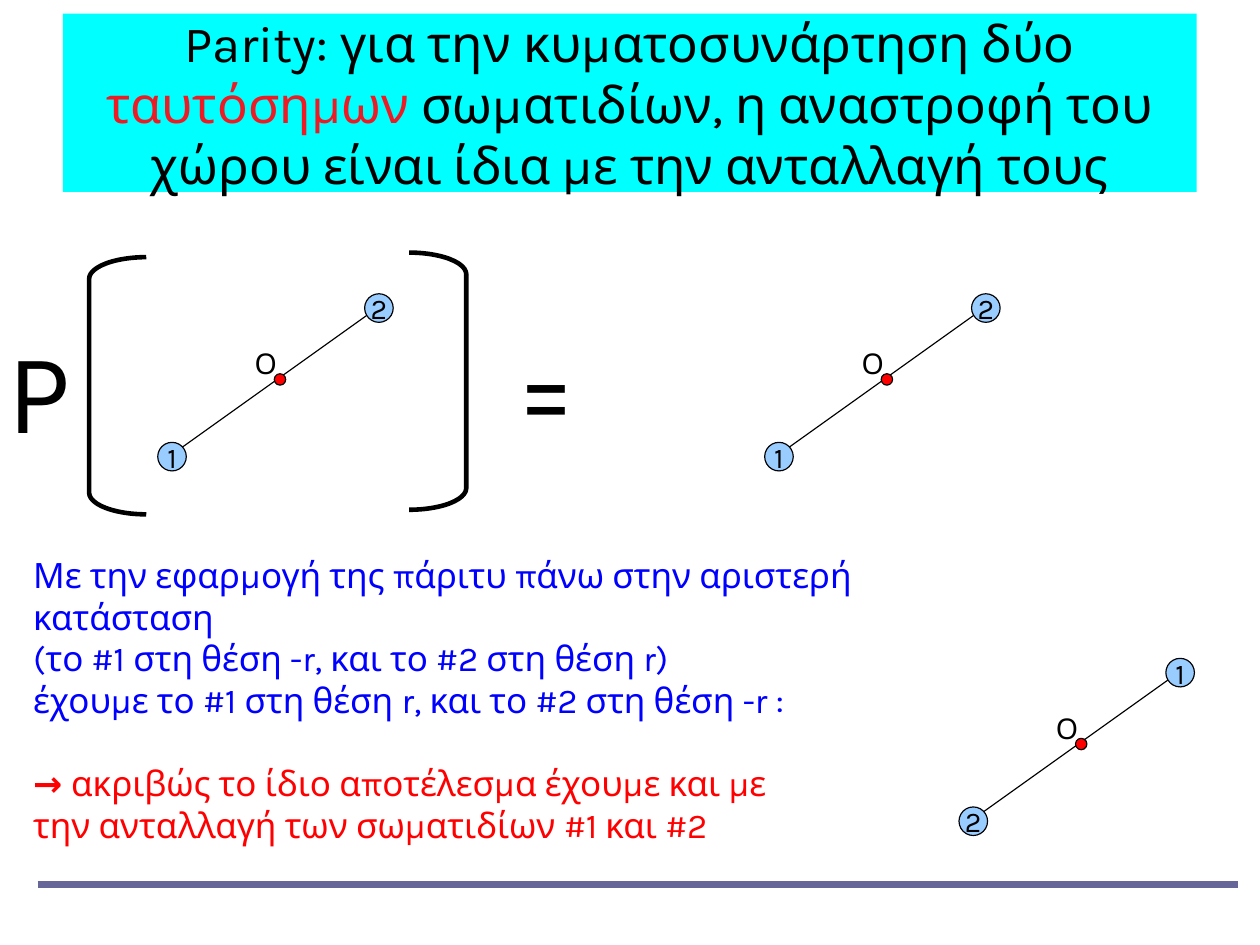
"""Build a slide on parity for two identical particles."""
from lxml.etree import SubElement
from pptx import Presentation
from pptx.dml.color import RGBColor
from pptx.enum.shapes import MSO_CONNECTOR, MSO_SHAPE
from pptx.enum.text import MSO_ANCHOR, MSO_AUTO_SIZE, PP_ALIGN
from pptx.oxml.ns import qn
from pptx.util import Inches, Pt

FONT = "Karla"
CM_PER_INCH = 2.54
BLACK = RGBColor(0x00, 0x00, 0x00)
CYAN = RGBColor(0x00, 0xFF, 0xFF)
CRIMSON = RGBColor(0xED, 0x1C, 0x24)
RED = RGBColor(0xFF, 0x00, 0x00)
BLUE = RGBColor(0x00, 0x00, 0xFF)
LIGHT_BLUE = RGBColor(0x99, 0xCC, 0xFF)
SLATE = RGBColor(0x66, 0x66, 0x99)


def place(sp, x, y, w, h):
    sp.left, sp.top, sp.width, sp.height = (Inches(v) for v in (x, y, w, h))


def add_run(p, text, size, color=BLACK, bold=False):
    r = p.add_run()
    r.text = text
    r.font.name = FONT
    r.font.size = Pt(size)
    r.font.bold = bold
    r.font.color.rgb = color


def add_line(s, x1, y1, x2, y2, color=BLACK, width=0.75):
    line = s.shapes.add_connector(
        MSO_CONNECTOR.STRAIGHT, *(Inches(v) for v in (x1, y1, x2, y2)))
    line.line.color.rgb = color
    line.line.width = Pt(width)
    SubElement(line._element.spPr, qn("a:effectLst"))


def add_label(s, text, x, y, w, h, size):
    sp = s.shapes.add_textbox(*(Inches(v) for v in (x, y, w, h)))
    sp.text_frame.word_wrap = True
    add_run(sp.text_frame.paragraphs[0], text, size)


def add_circle(s, x, y, size, fill, text=""):
    sp = s.shapes.add_shape(
        MSO_SHAPE.OVAL, *(Inches(v) for v in (x, y, size, size)))
    sp.shadow.inherit = False
    sp.fill.solid()
    sp.fill.fore_color.rgb = fill
    sp.line.color.rgb = BLACK
    sp.line.width = Pt(0.75)
    if text:
        tf = sp.text_frame
        tf.word_wrap = False
        tf.vertical_anchor = MSO_ANCHOR.MIDDLE
        p = tf.paragraphs[0]
        p.alignment = PP_ALIGN.CENTER
        add_run(p, text, 18)


def add_particle_pair(s, x, y, lower, upper):
    add_line(s, x + 0.12, y + 0.11, x + 1.87, y - 1.14)
    add_circle(s, x, y, 0.25, LIGHT_BLUE, lower)
    add_circle(s, x + 1.81, y - 1.3, 0.25, LIGHT_BLUE, upper)
    add_circle(s, x + 1.02, y - 0.6, 0.1, RED)
    add_label(s, "Ο", x + 0.75, y - 0.89, 0.39, 0.39, 18)


def add_bracket(s, shape, x, y):
    sp = s.shapes.add_shape(
        shape, Inches(x), Inches(y), Inches(0.5), Inches(2.25))
    sp.adjustments[0] = 0.38
    sp.shadow.inherit = False
    sp.fill.background()
    sp.line.color.rgb = BLACK
    sp.line.width = Pt(2.89)


def fill_title(sp):
    place(sp, 0.55, 0.12, 9.92, 1.56)
    sp.fill.solid()
    sp.fill.fore_color.rgb = CYAN
    tf = sp.text_frame
    tf.auto_size = MSO_AUTO_SIZE.NONE
    tf.vertical_anchor = MSO_ANCHOR.MIDDLE
    tf.margin_left = tf.margin_right = tf.margin_top = tf.margin_bottom = 0
    p = tf.paragraphs[0]
    p.alignment = PP_ALIGN.CENTER
    add_run(p, "Parity: για την κυματοσυνάρτηση δύο ", 32)
    add_run(p, "ταυτόσημων", 32, CRIMSON)
    add_run(p, " σωματιδίων, η αναστροφή του χώρου είναι ίδια με την "
               "ανταλλαγή τους", 32)


def add_plain_paragraph(tf, first=False, before=0):
    p = tf.paragraphs[0] if first else tf.add_paragraph()
    p.space_before = Pt(before)
    pPr = p._p.get_or_add_pPr()
    pPr.set("marL", "0")
    pPr.set("indent", "0")
    SubElement(pPr, qn("a:buNone"))
    return p


def fill_body(sp):
    place(sp, 0.19, 4.79, 7.75, 2.6)
    tf = sp.text_frame
    tf.auto_size = MSO_AUTO_SIZE.NONE
    explanation = (
        "Με την εφαρμογή της πάριτυ πάνω στην αριστερή κατάσταση",
        "(το #1 στη θέση -r, και το #2 στη θέση r)",
        "έχουμε το #1 στη θέση r, και το #2 στη θέση -r :",
    )
    for i, text in enumerate(explanation):
        add_run(add_plain_paragraph(tf, first=i == 0), text, 22, BLUE)
    p = add_plain_paragraph(tf, before=26)
    add_run(p, "→ ", 22, RED, bold=True)
    add_run(p, "ακριβώς το ίδιο αποτέλεσμα έχουμε και με", 22, RED)
    p.add_line_break()
    add_run(p, "την ανταλλαγή των σωματιδίων #1 και #2", 22, RED)


def main():
    prs = Presentation()
    prs.slide_width = Inches(28 / CM_PER_INCH)
    prs.slide_height = Inches(21 / CM_PER_INCH)
    s = prs.slides.add_slide(prs.slide_layouts[1])
    fill_title(s.shapes.title)
    fill_body(s.placeholders[1])
    add_line(s, 0.33, 7.74, 10.83, 7.74, SLATE, 4.31)
    add_label(s, "P", -0.03, 2.74, 0.8, 1.26, 72)
    add_bracket(s, MSO_SHAPE.LEFT_BRACKET, 0.78, 2.25)
    add_bracket(s, MSO_SHAPE.RIGHT_BRACKET, 3.58, 2.21)
    add_label(s, "=", 4.42, 2.7, 1.04, 1.26, 72)
    add_particle_pair(s, 1.38, 3.87, "1", "2")
    add_particle_pair(s, 6.69, 3.87, "1", "2")
    add_particle_pair(s, 8.39, 7.06, "2", "1")
    prs.save("out.pptx")


if __name__ == "__main__":
    main()
